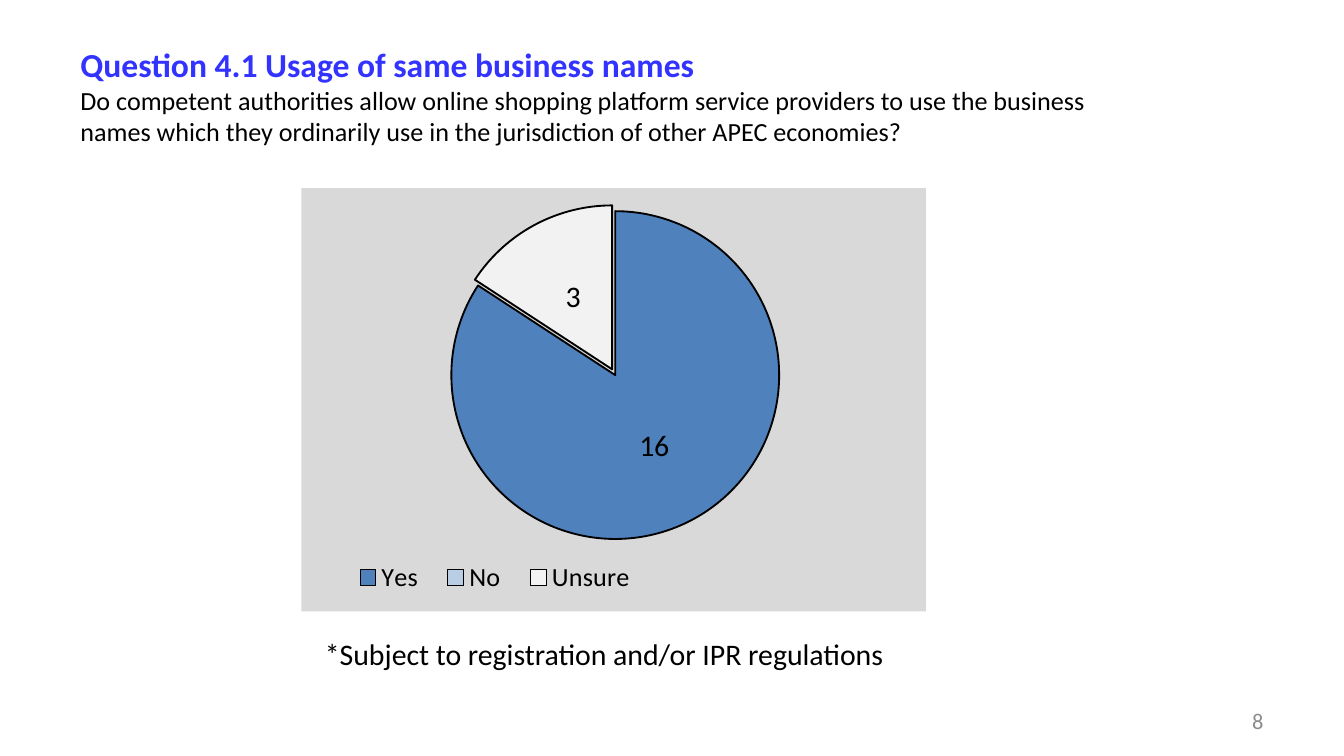
import pptx
import pptx.util
import pptx.chart.data
import pptx.dml.color
import pptx.enum.chart
import pptx.enum.text
import pptx.oxml

Pt = pptx.util.Pt
FONT = "Calibri"
HEX = {
    "title": "3333FF", "text": "000000", "page": "8C8C8C", "panel": "D9D9D9",
    "yes": "4F81BD", "no": "B9CDE5", "unsure": "F2F2F2",
}
NS = 'xmlns:c="http://schemas.openxmlformats.org/drawingml/2006/chart"'
ANCHOR = pptx.enum.text.MSO_ANCHOR
ALIGN = pptx.enum.text.PP_ALIGN


def rgb(key):
    return pptx.dml.color.RGBColor.from_string(HEX[key])


def style(font, size, key="text", bold=False):
    font.name = FONT
    font.size = Pt(size)
    font.bold = bold
    font.color.rgb = rgb(key)


def add_text(slide, box, lines, anchor=ANCHOR.TOP, align=ALIGN.LEFT):
    frame = slide.shapes.add_textbox(*map(Pt, box)).text_frame
    frame.word_wrap = True
    frame.vertical_anchor = anchor
    para = frame.paragraphs[0]
    para.alignment = align
    for i, (text, *look) in enumerate(lines):
        if i:
            para.add_line_break()
        run = para.add_run()
        run.text = text
        style(run.font, *look)


def layout(x, y, wide, high, inner=False):
    target = '<c:layoutTarget val="inner"/>' if inner else ""
    return pptx.oxml.parse_xml(
        f'<c:layout {NS}><c:manualLayout>{target}'
        '<c:xMode val="edge"/><c:yMode val="edge"/>'
        f'<c:x val="{x}"/><c:y val="{y}"/><c:w val="{wide}"/><c:h val="{high}"/>'
        '</c:manualLayout></c:layout>')


def set_layout(node, item):
    for old in node.xpath("c:layout"):
        node.remove(old)
    first = node.xpath("c:legendPos")
    if first:
        first[0].addnext(item)
    else:
        node.insert(0, item)


def add_labels(plot):
    plot.has_data_labels = True
    labels = plot.series[0].data_labels
    labels.show_value = True
    labels.position = pptx.enum.chart.XL_LABEL_POSITION.CENTER
    style(labels.font, 16)
    hide = f'<c:dLbl {NS}><c:idx val="1"/><c:delete val="1"/></c:dLbl>'
    plot.series[0]._element.xpath("c:dLbls")[0].insert(0, pptx.oxml.parse_xml(hide))


def add_pie(slide, box, cats, vals, keys):
    data = pptx.chart.data.CategoryChartData()
    data.categories = cats
    data.add_series("Series 1", vals)
    kind = pptx.enum.chart.XL_CHART_TYPE.PIE
    chart = slide.shapes.add_chart(kind, *map(Pt, box), data).chart
    chart.has_title = False
    style(chart.font, 10)

    plot = chart.plots[0]
    plot.vary_by_categories = True
    series = plot.series[0]
    for i, key in enumerate(keys):
        form = series.points[i].format
        form.fill.solid()
        form.fill.fore_color.rgb = rgb(key)
        form.line.color.rgb = rgb("text")
        form.line.width = Pt(1)
    burst = pptx.oxml.parse_xml(f'<c:explosion {NS} val="2"/>')
    series._element.xpath("c:dPt")[0].addprevious(burst)
    add_labels(plot)

    chart.has_legend = True
    legend = chart.legend
    legend.position = pptx.enum.chart.XL_LEGEND_POSITION.BOTTOM
    legend.include_in_layout = False
    style(legend.font, 14)
    set_layout(legend._element, layout(0.06, 0.87, 0.5, 0.1))
    root = chart._chartSpace
    area = root.xpath("c:chart/c:plotArea")[0]
    set_layout(area, layout(0.23, 0.04, 0.54, 0.79, True))
    panel = pptx.oxml.parse_xml(
        f'<c:spPr {NS} xmlns:a="http://schemas.openxmlformats.org/drawingml/2006/main">'
        f'<a:solidFill><a:srgbClr val="{HEX["panel"]}"/></a:solidFill>'
        '<a:ln><a:noFill/></a:ln></c:spPr>')
    root.xpath("c:chart")[0].addnext(panel)


def main():
    deck = pptx.Presentation()
    deck.slide_width, deck.slide_height = Pt(720), Pt(405)
    slide = deck.slides.add_slide(deck.slide_layouts[6])
    add_text(slide, (36, -24.5, 590.4, 151.2), [
        ("Question 4.1 Usage of same business names", 18, "title", True),
        ("Do competent authorities allow online shopping platform service "
         "providers to use the business names which they ordinarily use in "
         "the jurisdiction of other APEC economies?", 14),
    ], ANCHOR.MIDDLE)
    add_text(slide, (167, 337, 345.6, 26.6),
             [("*Subject to registration and/or IPR regulations", 16)])
    add_text(slide, (516, 375, 168, 21.6), [("8", 12, "page")],
             ANCHOR.MIDDLE, ALIGN.RIGHT)
    add_pie(slide, (161.5, 100.8, 334.6, 226.8), ("Yes", "No", "Unsure"),
            (16, 0, 3), ("yes", "no", "unsure"))
    deck.save("out.pptx")


if __name__ == "__main__":
    main()
